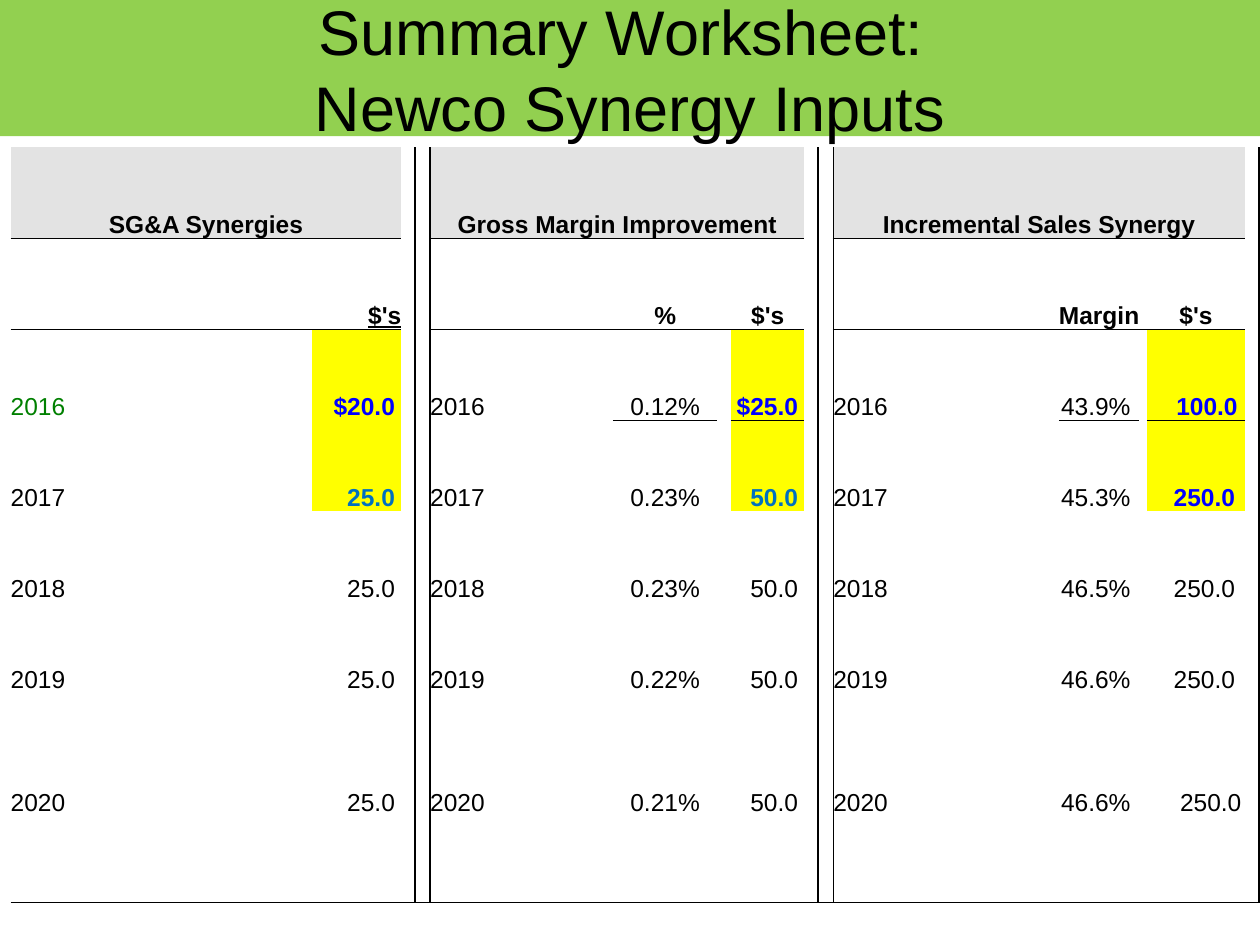
from dataclasses import dataclass

from lxml import etree
from pptx import Presentation
from pptx import util as u
from pptx.dml.color import RGBColor
from pptx.enum import shapes, text
from pptx.oxml import ns

LEFT, MID, RIGHT = text.PP_ALIGN.LEFT, text.PP_ALIGN.CENTER, text.PP_ALIGN.RIGHT
NO_STYLE = "{2D5ABB26-0587-4C30-8999-92F81FD0307C}"


@dataclass(frozen=True)
class Theme:
    font: str = "Arial"
    title: int = 36
    body: int = 14
    ink: str = "000000"
    band: str = "92D050"
    head: str = "E3E3E3"
    mark: str = "FFFF00"
    green: str = "008000"
    blue: str = "0000FF"
    teal: str = "0070C0"
    thin: float = 0.5
    rule: float = 1


THEME = Theme()


def write(frame, words, size=THEME.body, color=THEME.ink, bold=False, line=False, align=LEFT):
    for i, row in enumerate(words.split("\n")):
        para = frame.paragraphs[0] if i == 0 else frame.add_paragraph()
        para.alignment = align
        run = para.add_run()
        run.text = row
        font = run.font
        font.name, font.size, font.bold, font.underline = THEME.font, u.Pt(size), bold, line
        font.color.rgb = RGBColor.from_string(color)


class Deck:
    def __init__(self, theme):
        self.theme = theme
        self.show = Presentation()
        self.show.slide_width, self.show.slide_height = u.Inches(10), u.Inches(7.5)
        self.slide = self.show.slides.add_slide(self.show.slide_layouts[6])

    def wide(self, share):
        return round(self.show.slide_width * share / 100)

    def high(self, share):
        return round(self.show.slide_height * share / 100)

    def title(self, words, height):
        box = self.slide.shapes.add_shape(
            shapes.MSO_SHAPE.RECTANGLE, 0, 0, self.wide(100), self.high(height))
        box.shadow.inherit = False
        box.fill.solid()
        box.fill.fore_color.rgb = RGBColor.from_string(self.theme.band)
        box.line.fill.background()
        box.text_frame.word_wrap = True
        box.text_frame.vertical_anchor = text.MSO_ANCHOR.MIDDLE
        write(box.text_frame, words, size=self.theme.title, align=MID)

    def table(self, left, top, cols, rows):
        frame = self.slide.shapes.add_table(
            len(rows), len(cols), self.wide(left), self.high(top),
            self.wide(sum(cols)), self.high(sum(rows)))
        grid = frame.table
        grid.first_row = grid.horz_banding = False
        grid._tbl.tblPr.find(ns.qn("a:tableStyleId")).text = NO_STYLE
        for col, share in zip(grid.columns, cols):
            col.width = self.wide(share)
        for row, share in zip(grid.rows, rows):
            row.height = self.high(share)
        return grid

    def cell(self, cell, edges, fill=None):
        cell.margin_left = cell.margin_right = cell.margin_top = cell.margin_bottom = 0
        cell.vertical_anchor = text.MSO_ANCHOR.BOTTOM
        props = cell._tc.get_or_add_tcPr()
        for side in "LRTB":
            if side in edges:
                line = etree.SubElement(
                    props, ns.qn(f"a:ln{side}"), w=str(u.Pt(edges[side])))
                paint = etree.SubElement(line, ns.qn("a:solidFill"))
                etree.SubElement(paint, ns.qn("a:srgbClr"), val=self.theme.ink)
        if fill:
            cell.fill.solid()
            cell.fill.fore_color.rgb = RGBColor.from_string(fill)
        else:
            cell.fill.background()

    def label(self, cell, words, inset=0, **style):
        cell.margin_right = self.wide(inset)
        write(cell.text_frame, words, **style)


COLS = [17, 5.8, 1.1, 7.1, 1.1,
        1.2, 14.5, 8.3, 1.1, 5.8, 1.1,
        1.2, 17.9, 6.4, 0.6, 7.8, 1.1]
ROWS = [9.63] * 6 + [13.07, 9.07]
YEARS = ["2016", "2017", "2018", "2019", "2020"]
STARTS = (0, 6, 12)
ENDS = (3, 9, 15)
BARS = (4, 10, 16)
RATES = (7, 13)
LINED = RATES + ENDS[1:]
HEADS = ["SG&A Synergies", "Gross Margin Improvement", "Incremental Sales Synergy"]
SHARES = {
    7: ("%", MID, 0, ["0.12%", "0.23%", "0.23%", "0.22%", "0.21%"]),
    13: ("Margin", RIGHT, 0.7, ["43.9%", "45.3%", "46.5%", "46.6%", "46.6%"]),
}
SUMS = {
    3: ["$20.0"] + ["25.0"] * 4,
    9: ["$25.0"] + ["50.0"] * 4,
    15: ["100.0"] + ["250.0"] * 4,
}
INSETS = {3: [0.5] * 5, 9: [0.5] * 5, 15: [0.6, 0.8, 0.8, 0.8, 0.3]}


def edges(row, col):
    found = {}
    if col in BARS:
        found["R"] = THEME.rule
    elif col - 1 in BARS:
        found["L"] = THEME.rule
    elif row == 0:
        found["B"] = THEME.thin
    elif row == 1:
        found["T"] = THEME.thin
    if col in LINED and row == 1:
        found["B"] = THEME.thin
    if col in LINED and row == 2:
        found["T"] = THEME.thin
    if row == len(ROWS) - 1:
        found["B"] = THEME.rule
    return found


def shade(row, col):
    if row == 0 and col in STARTS:
        return THEME.head
    return THEME.mark if row in (2, 3) and col in ENDS else None


def tint(year, col):
    if year == 0:
        return THEME.blue
    if year == 1:
        return THEME.blue if col == ENDS[-1] else THEME.teal
    return THEME.ink


def main():
    deck = Deck(THEME)
    deck.title("Summary Worksheet: \nNewco Synergy Inputs", 14.4)
    grid = deck.table(0.85, 15.6, COLS, ROWS)
    for row in range(len(ROWS)):
        for col in range(len(COLS)):
            deck.cell(grid.cell(row, col), edges(row, col), shade(row, col))

    for start, end, head in zip(STARTS, ENDS, HEADS):
        grid.cell(0, start).merge(grid.cell(0, end))
        deck.label(grid.cell(0, start), head, bold=True, align=MID)
        first = start == 0
        deck.label(grid.cell(1, end), "$'s", bold=True, line=first,
                   align=RIGHT if first else MID)
        for i, year in enumerate(YEARS):
            color = THEME.green if first and i == 0 else THEME.ink
            deck.label(grid.cell(i + 2, start), year, color=color)
            deck.label(grid.cell(i + 2, end), SUMS[end][i], inset=INSETS[end][i],
                       color=tint(i, end), bold=i < 2, align=RIGHT)

    for col, (head, align, inset, rates) in SHARES.items():
        deck.label(grid.cell(1, col), head, bold=True, align=MID)
        for i, rate in enumerate(rates):
            deck.label(grid.cell(i + 2, col), rate, inset=inset, align=align)
    deck.show.save("out.pptx")


if __name__ == "__main__":
    main()
